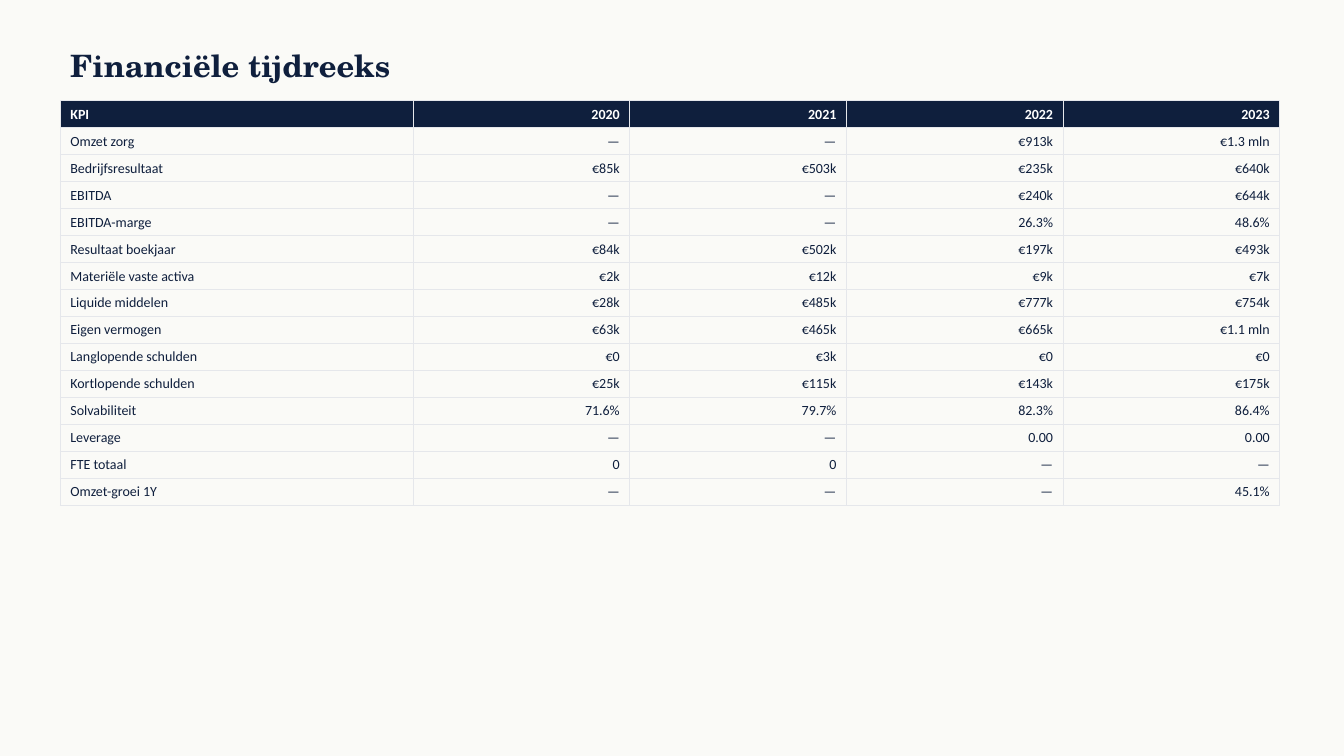
from lxml.etree import SubElement
from pptx import Presentation
from pptx.dml.color import RGBColor
from pptx.enum.text import MSO_ANCHOR, PP_ALIGN
from pptx.oxml.ns import qn
from pptx.util import Cm, Pt

TITLE = "Financiële tijdreeks"
HEADER = ("KPI", "2020", "2021", "2022", "2023")
KPIS = [
    ("Omzet zorg", "—", "—", "€913k", "€1.3 mln"),
    ("Bedrijfsresultaat", "€85k", "€503k", "€235k", "€640k"),
    ("EBITDA", "—", "—", "€240k", "€644k"),
    ("EBITDA-marge", "—", "—", "26.3%", "48.6%"),
    ("Resultaat boekjaar", "€84k", "€502k", "€197k", "€493k"),
    ("Materiële vaste activa", "€2k", "€12k", "€9k", "€7k"),
    ("Liquide middelen", "€28k", "€485k", "€777k", "€754k"),
    ("Eigen vermogen", "€63k", "€465k", "€665k", "€1.1 mln"),
    ("Langlopende schulden", "€0", "€3k", "€0", "€0"),
    ("Kortlopende schulden", "€25k", "€115k", "€143k", "€175k"),
    ("Solvabiliteit", "71.6%", "79.7%", "82.3%", "86.4%"),
    ("Leverage", "—", "—", "0.00", "0.00"),
    ("FTE totaal", "0", "0", "—", "—"),
    ("Omzet-groei 1Y", "—", "—", "—", "45.1%"),
]

NAVY, WHITE, PAPER, GRID = "0F1F3D", "FFFFFF", "FAFAF7", "E5E7EB"
LEFT, TABLE_TOP = 1.52, 2.54
KPI_WIDTH, YEAR_WIDTH, ROW_HEIGHT = 8.89, 5.46, 0.68


def paint(color_owner, color):
    """Give a fill a solid colour."""
    color_owner.solid()
    color_owner.fore_color.rgb = RGBColor.from_string(color)


def style(paragraph, font_name, size, color, bold):
    for run in paragraph.runs:
        run.font.name = font_name
        run.font.size = Pt(size)
        run.font.bold = bold
        paint(run.font.fill, color)


def add_borders(cell):
    properties = cell._tc.get_or_add_tcPr()
    for side in ("a:lnL", "a:lnR", "a:lnT", "a:lnB"):
        line = SubElement(properties, qn(side), w=str(Pt(0.5)))
        solid = SubElement(line, qn("a:solidFill"))
        SubElement(solid, qn("a:srgbClr"), val=GRID)


def add_title(slide):
    title = slide.shapes.add_textbox(Cm(LEFT), Cm(1.02), Cm(30.48), Cm(1.27))
    frame = title.text_frame
    frame.word_wrap = True
    frame.vertical_anchor = MSO_ANCHOR.MIDDLE
    frame.text = TITLE
    style(frame.paragraphs[0], "TeX Gyre Schola", 22, NAVY, True)


def add_kpi_table(slide):
    rows = [HEADER, *KPIS]
    widths = [KPI_WIDTH] + [YEAR_WIDTH] * (len(HEADER) - 1)
    table = slide.shapes.add_table(
        len(rows), len(widths), Cm(LEFT), Cm(TABLE_TOP),
        Cm(sum(widths)), Cm(ROW_HEIGHT * len(rows))).table
    table.horz_banding = False
    for column, width in zip(table.columns, widths):
        column.width = Cm(width)
    for r, values in enumerate(rows):
        is_header = r == 0
        table.rows[r].height = Cm(ROW_HEIGHT)
        for c, value in enumerate(values):
            cell = table.cell(r, c)
            cell.text_frame.text = value
            paragraph = cell.text_frame.paragraphs[0]
            paragraph.alignment = PP_ALIGN.RIGHT if c else PP_ALIGN.LEFT
            style(paragraph, "Calibri", 10, WHITE if is_header else NAVY, is_header)
            add_borders(cell)
            if is_header:
                paint(cell.fill, NAVY)
            else:
                cell.fill.background()


def main():
    deck = Presentation()
    deck.slide_width, deck.slide_height = Cm(33.87), Cm(19.05)
    slide = deck.slides.add_slide(deck.slide_layouts[6])
    paint(slide.background.fill, PAPER)
    add_title(slide)
    add_kpi_table(slide)
    deck.save("out.pptx")


if __name__ == "__main__":
    main()
